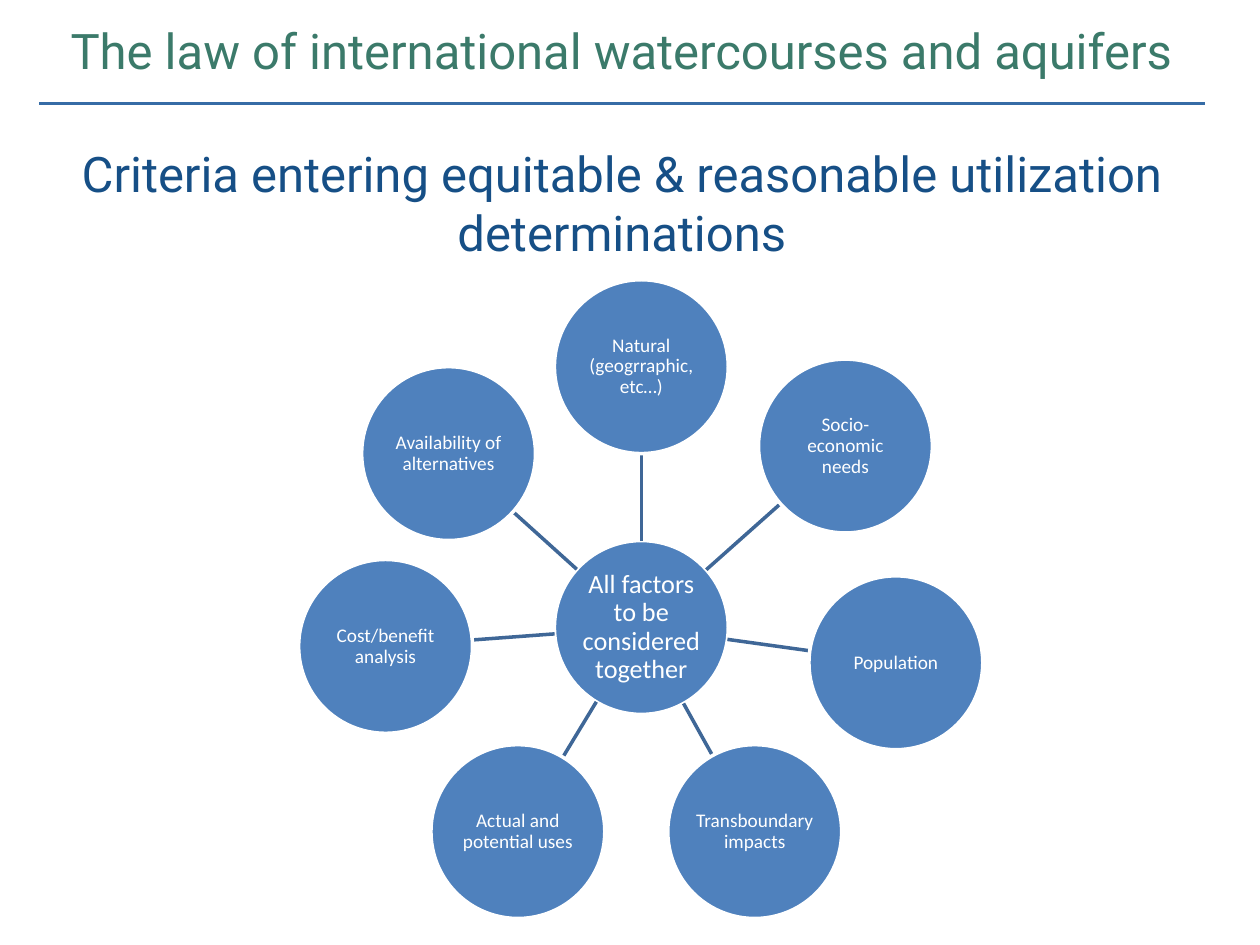
"""Build a slide with a hub of seven criteria around one centre."""
from math import hypot

from lxml import etree
from pptx import Presentation
from pptx.dml.color import RGBColor
from pptx.enum.shapes import MSO_CONNECTOR, MSO_SHAPE
from pptx.enum.text import MSO_ANCHOR, MSO_AUTO_SIZE, PP_ALIGN
from pptx.oxml.ns import qn
from pptx.util import Inches, Pt

OVAL, LINE = MSO_SHAPE.OVAL, MSO_CONNECTOR.STRAIGHT
MIDDLE, FIXED = MSO_ANCHOR.MIDDLE, MSO_AUTO_SIZE.NONE
CENTER, JUSTIFY = PP_ALIGN.CENTER, PP_ALIGN.JUSTIFY

HEADS = [
    ("The law of international watercourses and aquifers",
     (0.5, -0.37, 10.86, 1.53), "3B7A6A", JUSTIFY),
    ("Criteria entering equitable & reasonable utilization determinations",
     (-0.44, 1.07, 10.75, 1.07), "164F86", CENTER),
]
RULE = (0.31, 0.82, 9.56, 0.82)
SIZE = 1.38
HUB = ("All factors to be considered together", 5.09, 4.98)
NODES = [
    ("Natural (geogrraphic, etc…)", 5.09, 2.91),
    ("Socio-economic needs", 6.71, 3.54),
    ("Population", 7.11, 5.26),
    ("Transboundary impacts", 5.99, 6.6),
    ("Actual and potential uses", 4.11, 6.6),
    ("Cost/benefit analysis", 3.06, 5.13),
    ("Availability of alternatives", 3.56, 3.6),
]


def tint(code):
    return RGBColor.from_string(code)


def write(shape, text, font, size, color, align, inset, gap):
    frame = shape.text_frame
    pad = Inches(inset)
    form = dict(word_wrap=True, auto_size=FIXED, vertical_anchor=MIDDLE,
                margin_left=pad, margin_right=pad,
                margin_top=pad, margin_bottom=pad)
    for name, value in form.items():
        setattr(frame, name, value)
    para = frame.paragraphs[0]
    form = dict(alignment=align, line_spacing=gap,
                space_before=Pt(0), space_after=Pt(0))
    for name, value in form.items():
        setattr(para, name, value)
    run = para.add_run()
    run.text = text
    run.font.name, run.font.size = font, Pt(size)
    run.font.color.rgb = tint(color)


def draw_line(slide, ends, color):
    line = slide.shapes.add_connector(LINE, *map(Inches, ends))
    line.line.color.rgb, line.line.width = tint(color), Pt(2)
    etree.SubElement(line.element.spPr, qn("a:effectLst"))


def draw_spoke(slide, x, y):
    _, hx, hy = HUB
    share = SIZE / 2 / hypot(x - hx, y - hy)
    dx, dy = (x - hx) * share, (y - hy) * share
    draw_line(slide, (hx + dx, hy + dy, x - dx, y - dy), "3F6797")


def draw_node(slide, text, x, y, size):
    box = (x - SIZE / 2, y - SIZE / 2, SIZE, SIZE)
    node = slide.shapes.add_shape(OVAL, *map(Inches, box))
    node.shadow.inherit = False
    node.fill.solid()
    node.fill.fore_color.rgb = tint("4F81BD")
    node.line.color.rgb, node.line.width = tint("FFFFFF"), Pt(2)
    write(node, text, "Calibri", size, "FFFFFF", CENTER, 0.01, 0.9)


def main():
    deck = Presentation()
    deck.slide_width, deck.slide_height = Inches(10), Inches(7.5)
    slide = deck.slides.add_slide(deck.slide_layouts[0])
    for holder, (text, box, color, align) in zip(slide.placeholders, HEADS):
        for name, value in zip(("left", "top", "width", "height"), box):
            setattr(holder, name, Inches(value))
        write(holder, text, "Roboto", 28, color, align, 0.06, 1.0)
    draw_line(slide, RULE, "366CA6")
    draw_node(slide, *HUB, 15)
    for text, x, y in NODES:
        draw_spoke(slide, x, y)
        draw_node(slide, text, x, y, 11)
    deck.save("out.pptx")


if __name__ == "__main__":
    main()
